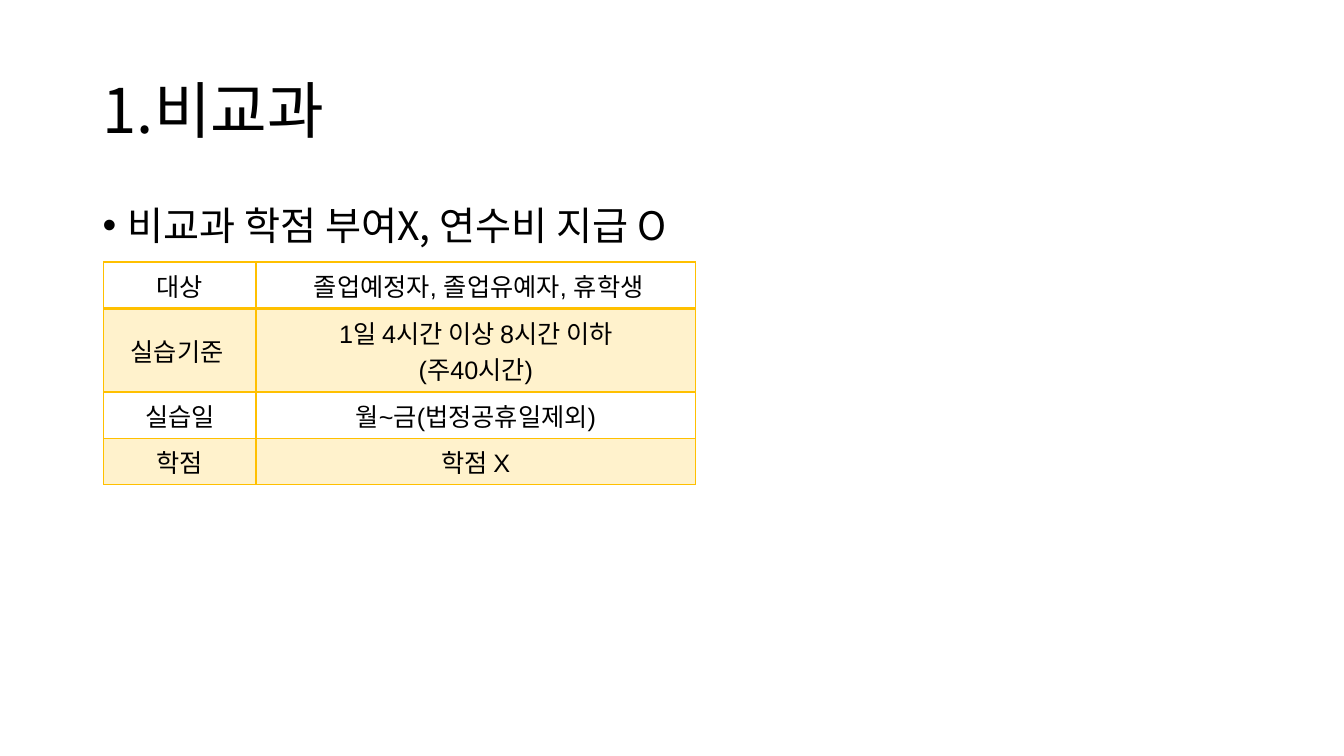
from lxml import etree
from pptx import Presentation
from pptx.dml.color import RGBColor
from pptx.enum.text import MSO_ANCHOR, PP_ALIGN
from pptx.oxml.ns import qn
from pptx.util import Inches, Pt

MIDDLE = MSO_ANCHOR.MIDDLE
TOP = MSO_ANCHOR.TOP
CENTER = PP_ALIGN.CENTER

COLORS = {"text": "000000", "gold": "FFC000"}
KOREAN = "Noto Sans CJK KR"
FORMATS = {
    "title": {"size": Pt(44), "name": KOREAN},
    "body": {"size": Pt(28), "name": KOREAN},
    "cell": {"size": Pt(18), "name": "Arial"},
}
# Label, lines of detail
ROWS = [
    ("대상", [" 졸업예정자, 졸업유예자, 휴학생"]),
    ("실습기준 ", ["1일 4시간 이상 8시간 이하", "(주40시간)"]),
    ("실습일", ["월~금(법정공휴일제외)"]),
    ("학점", ["학점 X"]),
]


def add_run(para, text, style):
    run = para.add_run()
    run.text = text
    for key, value in FORMATS[style].items():
        setattr(run.font, key, value)
    run.font.color.rgb = RGBColor.from_string(COLORS["text"])
    east = etree.SubElement(run.font._element, qn("a:ea"))
    east.set("typeface", KOREAN)


def add_text(slide, box, text, style, anchor, bullet=None):
    frame = slide.shapes.add_textbox(*map(Inches, box)).text_frame
    frame.word_wrap = True
    frame.vertical_anchor = anchor
    para = frame.paragraphs[0]
    para.line_spacing = 0.9
    if bullet:
        props = para._p.get_or_add_pPr()
        props.set("marL", str(Inches(0.25)))
        props.set("indent", str(Inches(-0.25)))
        font = etree.SubElement(props, qn("a:buFont"))
        font.set("typeface", "Arial")
        etree.SubElement(props, qn("a:buChar")).set("char", bullet)
    add_run(para, text, style)


def add_border(cell, side, width):
    line = etree.SubElement(cell._tc.get_or_add_tcPr(), qn(f"a:ln{side}"))
    line.set("w", str(Pt(width)))
    fill = etree.SubElement(line, qn("a:solidFill"))
    etree.SubElement(fill, qn("a:srgbClr")).set("val", COLORS["gold"])


def fill_cell(cell, lines, row):
    cell.vertical_anchor = MIDDLE if row == 1 else TOP
    # Borders, with a heavier rule under the first row
    for side in "LRTB":
        heavy = (row, side) in [(0, "B"), (1, "T")]
        add_border(cell, side, 2 if heavy else 1)
    # Pale gold on every other row
    if row % 2:
        cell.fill.solid()
        cell.fill.fore_color.rgb = RGBColor.from_string(COLORS["gold"])
        tint = cell._tc.tcPr.find(qn("a:solidFill"))[0]
        etree.SubElement(tint, qn("a:alpha")).set("val", "20000")
    else:
        cell.fill.background()
    frame = cell.text_frame
    for i, text in enumerate(lines):
        para = frame.add_paragraph() if i else frame.paragraphs[0]
        para.alignment = CENTER
        add_run(para, text, "cell")


def add_grid(slide, box):
    table = slide.shapes.add_table(len(ROWS), 2, *map(Inches, box)).table
    table.first_row = table.horz_banding = False
    label = 1.51
    for col, width in zip(table.columns, (label, box[2] - label)):
        col.width = Inches(width)
    for r, (head, lines) in enumerate(ROWS):
        table.rows[r].height = Inches(0.46 + 0.37 * (len(lines) - 1))
        fill_cell(table.cell(r, 0), [head], r)
        fill_cell(table.cell(r, 1), lines, r)


def main():
    deck = Presentation()
    deck.slide_width, deck.slide_height = Inches(13.33), Inches(7.5)
    slide = deck.slides.add_slide(deck.slide_layouts[6])
    # Heading and bullet
    add_text(slide, (0.92, 0.4, 11.5, 1.45), "1.비교과", "title", MIDDLE)
    add_text(slide, (0.92, 2, 11.5, 4.76), "비교과 학점 부여X, 연수비 지급 O",
             "body", TOP, "•")
    # Conditions table
    add_grid(slide, (1.03, 2.6, 5.87, 2.21))
    deck.save("out.pptx")


if __name__ == "__main__":
    main()
